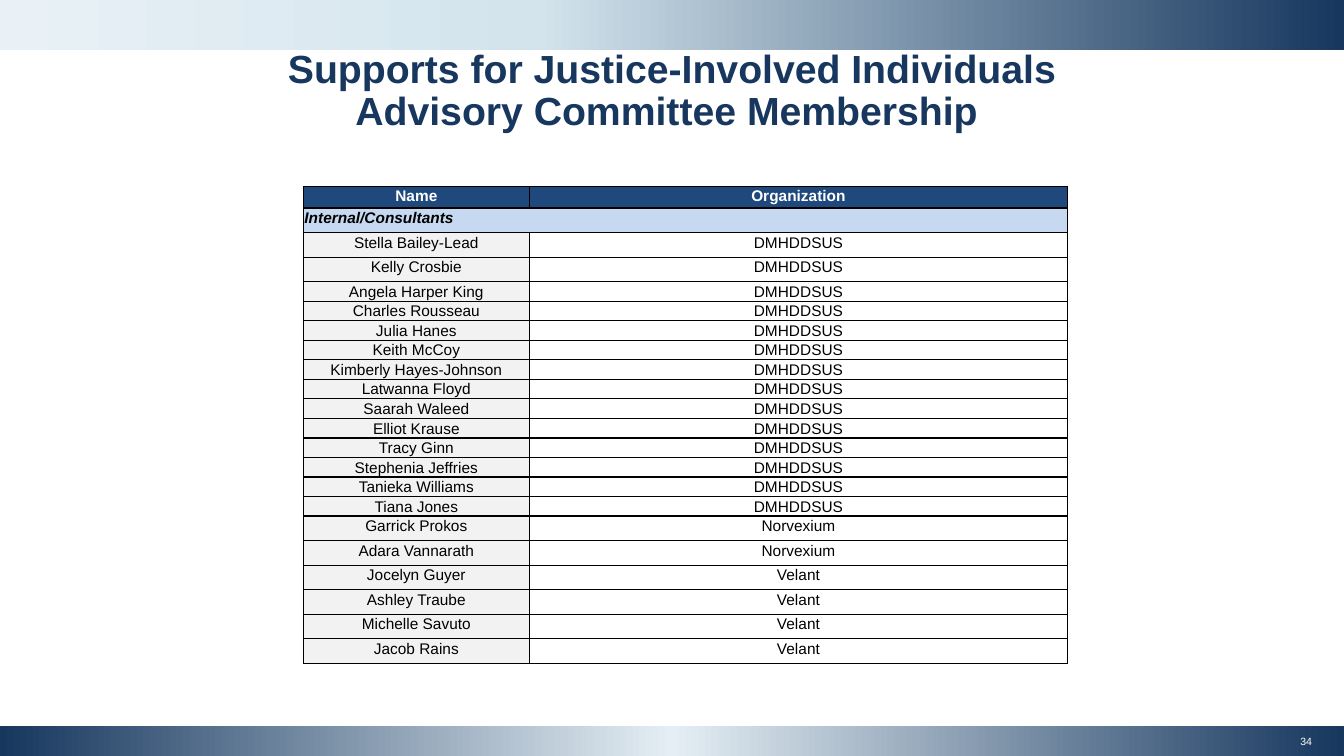
from copy import deepcopy

from lxml.etree import SubElement
from pptx import Presentation
from pptx.dml.color import RGBColor
from pptx.enum.shapes import MSO_SHAPE as SHAPE
from pptx.enum.text import MSO_ANCHOR as ANCHOR, PP_ALIGN as ALIGN
from pptx.oxml.ns import qn
from pptx.util import Inches, Pt

NAVY, BLUE, PALE_BLUE = "17375E", "1F497D", "C6D9F1"
GREY, WHITE, BLACK = "F2F2F2", "FFFFFF", "000000"

# Insets: left, top, right, bottom
HEADER_INS = (0, 0, 0, 0.03)
ROOMY_INS = (0.01, 0.01, 0.01, 0.05)
TIGHT_INS = (0.01, 0.01, 0.01, 0)

AGENCY_NAMES = [
    "Stella Bailey-Lead", "Kelly Crosbie", "Angela Harper King",
    "Charles Rousseau", "Julia Hanes", "Keith McCoy",
    "Kimberly Hayes-Johnson", "Latwanna Floyd", "Saarah Waleed",
    "Elliot Krause", "Tracy Ginn", "Stephenia Jeffries",
    "Tanieka Williams", "Tiana Jones",
]
MEMBERS = {
    "DMHDDSUS": AGENCY_NAMES,
    "Norvexium": ["Garrick Prokos", "Adara Vannarath"],
    "Velant": ["Jocelyn Guyer", "Ashley Traube", "Michelle Savuto",
               "Jacob Rains"],
}
TIGHT_NAMES = AGENCY_NAMES[2:]


def rgb(color):
    return RGBColor.from_string(color)


class Deck:
    """Holds the style and the current slide."""

    font = "Arial"

    def __init__(self, width, height):
        self.prs = Presentation()
        self.prs.slide_width = Inches(width)
        self.prs.slide_height = Inches(height)
        self.s = self.prs.slides.add_slide(self.prs.slide_layouts[6])

    def band(self, top, height, stops):
        sp = self.s.shapes.add_shape(
            SHAPE.RECTANGLE, 0, Inches(top), self.prs.slide_width, Inches(height))
        sp.shadow.inherit = False
        sp.line.fill.background()
        sp.fill.gradient()
        sp.fill.gradient_angle = 180
        gs_list = next(sp._element.iter(qn("a:gsLst")))
        gs_list.append(deepcopy(gs_list[0]))
        for stop, (position, color) in zip(sp.fill.gradient_stops, stops):
            stop.position = position
            stop.color.rgb = rgb(color)

    def add_run(self, tf, text, size, color, align=ALIGN.CENTER, spacing=None, **fmt):
        p = tf.paragraphs[0]
        p.alignment = align
        p.line_spacing = spacing
        r = p.add_run()
        r.text = text
        r.font.color.rgb = rgb(color)
        for name, value in {"name": self.font, "size": Pt(size), **fmt}.items():
            setattr(r.font, name, value)

    def inset(self, target, sides):
        for side, value in zip(("left", "top", "right", "bottom"), sides):
            setattr(target, f"margin_{side}", Inches(value))

    def text(self, box, text, size, color, ins=(0.1, 0.05, 0.1, 0.05),
             anchor=ANCHOR.TOP, **fmt):
        tf = self.s.shapes.add_textbox(*map(Inches, box)).text_frame
        tf.word_wrap = True
        tf.vertical_anchor = anchor
        self.inset(tf, ins)
        self.add_run(tf, text, size, color, **fmt)

    def table(self, left, top, widths, row_height, n_rows):
        table = self.s.shapes.add_table(
            n_rows, len(widths), Inches(left), Inches(top),
            Inches(sum(widths)), Inches(row_height * n_rows)).table
        table.first_row = table.horz_banding = False
        for column, width in zip(table.columns, widths):
            column.width = Inches(width)
        for cell in table.iter_cells():
            self.border(cell)
        return table

    def border(self, cell):
        tc_pr = cell._tc.get_or_add_tcPr()
        for side in "LRTB":
            ln = SubElement(tc_pr, qn(f"a:ln{side}"), w=str(Pt(1)))
            fill = SubElement(ln, qn("a:solidFill"))
            SubElement(fill, qn("a:srgbClr"), val=BLACK)

    def cell(self, cell, text, fill, ins, color=BLACK, **fmt):
        cell.fill.solid()
        cell.fill.fore_color.rgb = rgb(fill)
        cell.vertical_anchor = ANCHOR.MIDDLE
        self.inset(cell, ins)
        self.add_run(cell.text_frame, text, 11, color, **fmt)


def main():
    deck = Deck(13.33, 7.5)

    # Bottom and top bands
    deck.band(7.2, 0.3, [(0, NAVY), (0.5, "E4EEF4"), (1, NAVY)])
    for height in (0.5, 0.32):
        deck.band(0, height, [(0, NAVY), (0.6, "D3E4ED"), (1, "E9F1F6")])

    # Title
    deck.text((1.93, 0.44, 9.47, 0.6),
              "Supports for Justice-Involved Individuals "
              "Advisory Committee Membership ",
              28, NAVY, spacing=0.9, bold=True)

    # Membership table: header, section row, one row per member
    members = [(name, org) for org, names in MEMBERS.items() for name in names]
    table = deck.table(3.01, 1.85, (2.24, 5.34), 0.16, len(members) + 2)
    for col, heading in enumerate(("Name", "Organization")):
        deck.cell(table.cell(0, col), heading, BLUE, HEADER_INS, WHITE, bold=True)

    section = table.cell(1, 0)
    section.merge(table.cell(1, 1))
    deck.cell(section, "Internal/Consultants", PALE_BLUE, ROOMY_INS,
              align=ALIGN.LEFT, bold=True, italic=True)

    for row, member in enumerate(members, start=2):
        ins = TIGHT_INS if member[0] in TIGHT_NAMES else ROOMY_INS
        for col, fill in enumerate((GREY, WHITE)):
            deck.cell(table.cell(row, col), member[col], fill, ins)

    # Slide number
    deck.text((12.82, 7.28, 0.27, 0.15), "34", 7.5, WHITE,
              ins=(0, 0.01, 0, 0.01), anchor=ANCHOR.MIDDLE)

    deck.prs.save("out.pptx")


if __name__ == "__main__":
    main()
